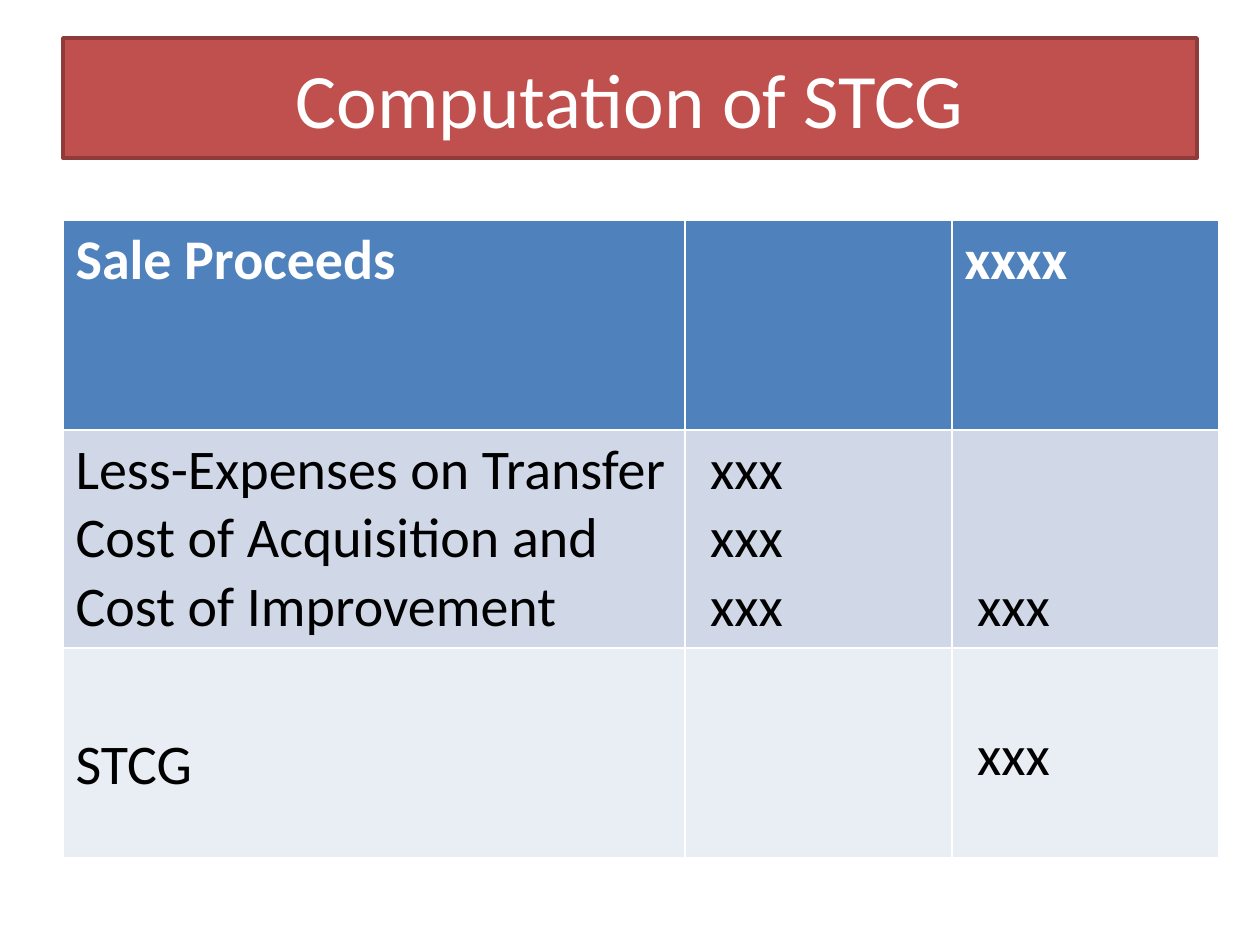
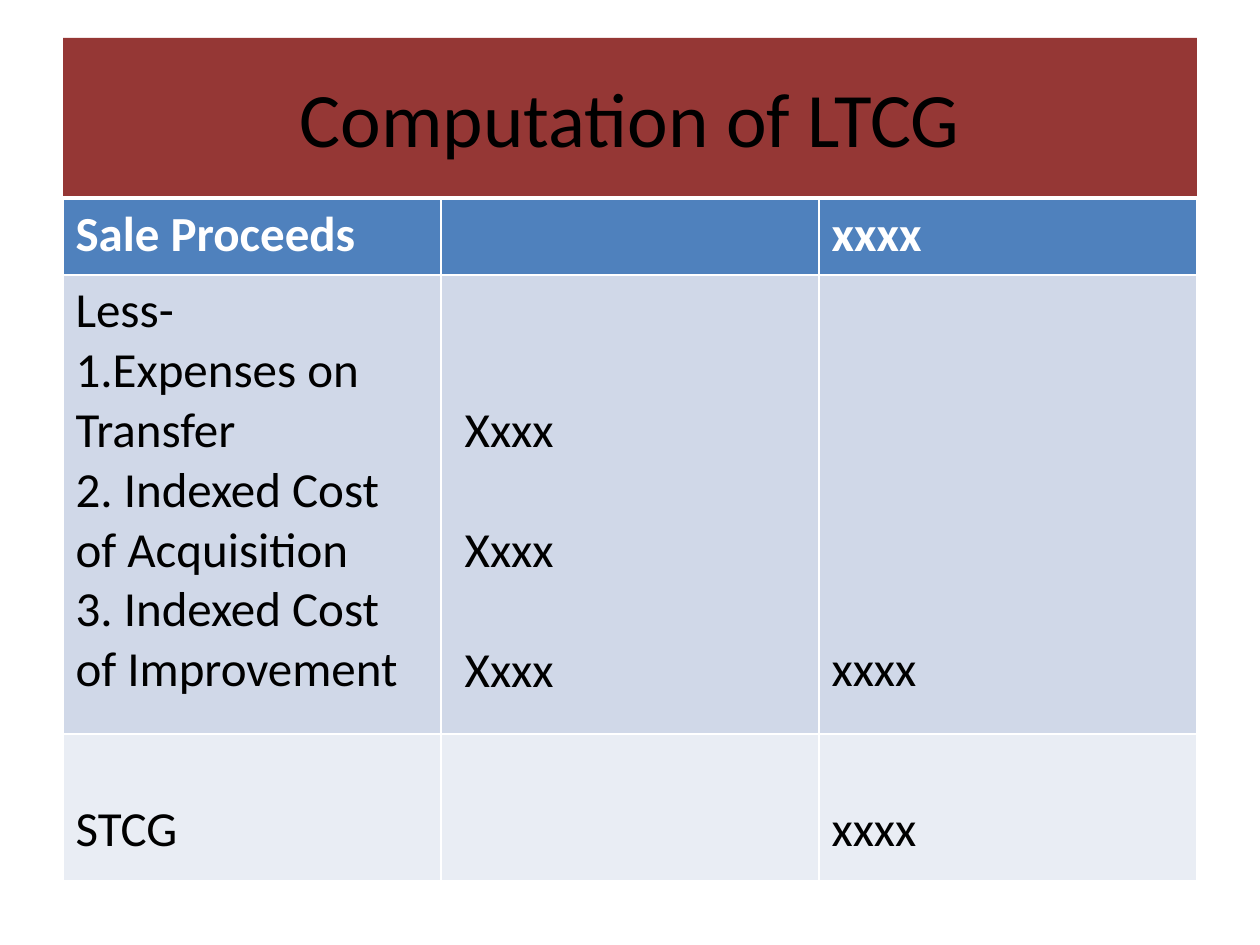
from dataclasses import dataclass

from pptx import Presentation, util as u
from pptx.dml.color import RGBColor
from pptx.enum import text

PX_PER_INCH = 126
FONT = "Calibri"
WHITE, BLACK = "FFFFFF", "000000"
ROW_FILLS = ["4F81BD", "D0D8E8", "E9EDF4"]  # header, deductions, result
CELL_MARGIN = 6
LINE_HEIGHT = 1.22  # in font sizes


def px(length):
    return u.Emu(round(length * u.Inches(1) / PX_PER_INCH))


def color(hex_code):
    return RGBColor.from_string(hex_code)


@dataclass
class Entry:
    """Lines of a cell; lead and gap count the free lines above and between."""
    lines: tuple = ()
    lead: float = 0
    gap: float = 0


class Deck:
    def __init__(self):
        self.prs = Presentation()
        self.prs.slide_width, self.prs.slide_height = px(1260), px(945)
        self.slide = None

    def add_slide(self):
        title_only = self.prs.slide_layouts[5]
        self.slide = self.prs.slides.add_slide(title_only)

    def style(self, paragraph, size, ink, bold=False):
        for run in paragraph.runs:
            run.font.name = FONT
            run.font.size = u.Pt(size)
            run.font.bold = bold
            run.font.color.rgb = color(ink)

    def title(self, wording, height, fill, ink, outline=None):
        band = self.slide.shapes.title
        band.left, band.top, band.width, band.height = map(px, (63, 38, 1134, height))
        band.fill.solid()
        band.fill.fore_color.rgb = color(fill)
        if outline:
            band.line.color.rgb = color(outline)
            band.line.width = u.Pt(2)
        frame = band.text_frame
        frame.text = wording
        frame.word_wrap = True
        frame.auto_size = text.MSO_AUTO_SIZE.NONE
        frame.vertical_anchor = text.MSO_ANCHOR.MIDDLE
        frame.paragraphs[0].alignment = text.PP_ALIGN.CENTER
        self.style(frame.paragraphs[0], 44, ink)

    def statement(self, top, widths, heights, size, rows):
        table = self.slide.shapes.add_table(
            len(rows), len(widths), px(63), px(top),
            px(sum(widths)), px(sum(heights))).table
        for column, width in zip(table.columns, widths):
            column.width = px(width)
        for r, (height, entries) in enumerate(zip(heights, rows)):
            table.rows[r].height = px(height)
            for c, entry in enumerate(entries):
                self.cell(table.cell(r, c), entry, size, ROW_FILLS[r], header=r == 0)

    def cell(self, cell, entry, size, fill, header):
        cell.fill.solid()
        cell.fill.fore_color.rgb = color(fill)
        line = size * LINE_HEIGHT
        cell.margin_top = px(round(CELL_MARGIN + entry.lead * line * PX_PER_INCH / 72))
        cell.text_frame.text = "\n".join(entry.lines)
        for i, paragraph in enumerate(cell.text_frame.paragraphs):
            if i and entry.gap:
                paragraph.space_before = u.Pt(round(entry.gap * line, 1))
            self.style(paragraph, size, WHITE if header else BLACK, header)


def main():
    deck = Deck()
    blank = Entry()
    proceeds = [Entry(("Sale Proceeds",)), blank, Entry(("xxxx",))]

    # Short-term capital gain
    deck.add_slide()
    deck.title("Computation of STCG", 120, "C0504D", WHITE, outline="8E3B39")
    deck.statement(220, [622, 267, 267], [210] * 3, 32, [
        proceeds,
        [Entry(("Less-Expenses on Transfer", "Cost of Acquisition and",
                "Cost of Improvement")),
         Entry((" xxx",) * 3),
         Entry((" xxx",), lead=2)],
        [Entry(("STCG",), lead=1.13), blank, Entry((" xxx",), lead=1)],
    ])

    # Long-term capital gain
    deck.add_slide()
    deck.title("Computation of LTCG", 158, "953735", BLACK)
    deck.statement(199, [378] * 3, [76, 459, 147], 28, [
        proceeds,
        [Entry(("Less-", "1.Expenses on Transfer", "2. Indexed Cost of Acquisition",
                "3. Indexed Cost of Improvement")),
         Entry((" Xxxx",) * 3, lead=2, gap=1),
         Entry(("xxxx",), lead=6)],
        [Entry(("STCG",), lead=1), blank, Entry(("xxxx",), lead=1)],
    ])

    deck.prs.save("out.pptx")


if __name__ == "__main__":
    main()
